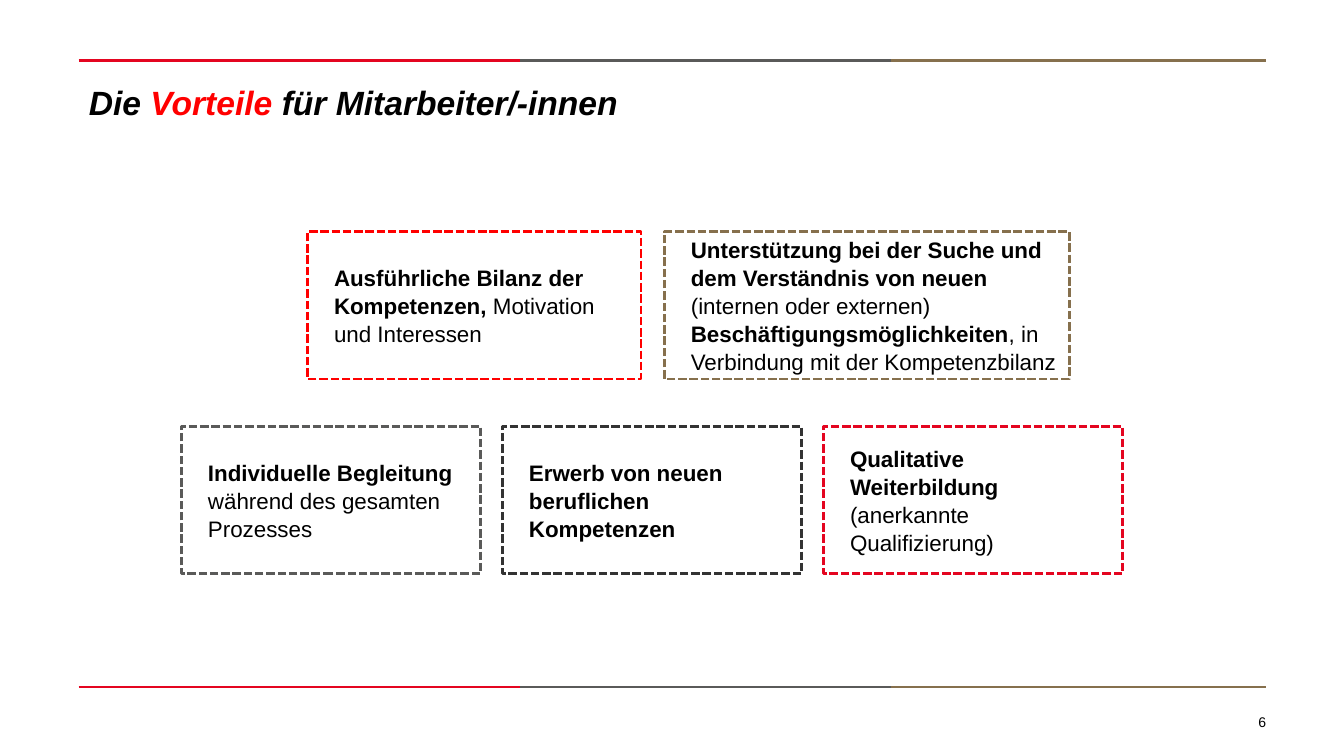
from pptx import Presentation
from pptx.dml.color import RGBColor
from pptx.enum.dml import MSO_LINE
from pptx.enum.shapes import MSO_CONNECTOR, MSO_SHAPE
from pptx.enum.text import MSO_ANCHOR, MSO_AUTO_SIZE, PP_ALIGN
from pptx.oxml.ns import qn
from pptx.util import Pt
from lxml.etree import SubElement

RED, GREY, BROWN = "E40520", "5A5A59", "86704D"
BRIGHT_RED, DARK, BLACK = "FF0000", "333333", "000000"
MARGIN_LEFT, CONTENT_WIDTH = 56.2, 848.2


def color(hex_string):
    return RGBColor.from_string(hex_string)


def add_span(para, text, size, bold=False, italic=False, ink=BLACK):
    span = para.add_run()
    span.text = text
    span.font.name = "Arial"
    span.font.size = Pt(size)
    span.font.bold = bold
    span.font.italic = italic
    span.font.color.rgb = color(ink)


deck = Presentation()
deck.slide_width, deck.slide_height = Pt(960), Pt(540)
page = deck.slides.add_slide(deck.slide_layouts[5])

# Three-coloured rules at the bottom and top
for y in (491, 43.2):
    for start, end, ink in ((56.2, 381.6, RED), (371.5, 638.6, GREY), (636.5, 904.4, BROWN)):
        rule = page.shapes.add_connector(MSO_CONNECTOR.STRAIGHT, Pt(start), Pt(y), Pt(end), Pt(y))
        rule.line.color.rgb = color(ink)
        rule.line.width = Pt(1.5)
        SubElement(rule._element.spPr, qn("a:effectLst"))

# Title
title = page.shapes.title
title.left, title.top = Pt(MARGIN_LEFT), Pt(54.7)
title.width, title.height = Pt(CONTENT_WIDTH), Pt(72)
frame = title.text_frame
frame.auto_size = MSO_AUTO_SIZE.NONE
frame.vertical_anchor = MSO_ANCHOR.TOP
para = frame.paragraphs[0]
para.alignment = PP_ALIGN.LEFT
for text, ink in (("Die", BLACK), (" Vorteile ", BRIGHT_RED), ("für Mitarbeiter/-innen", BLACK)):
    add_span(para, text, 24, bold=True, italic=True, ink=ink)

# Benefit boxes: rows of (top, left, gap, boxes), boxes of (width, outline, spans);
# a span is (text, bold), and None is a line break
BOX_HEIGHT = 105.1
rows = [
    (165.6, 219.6, 16.6, [
        (238.3, BRIGHT_RED, [("Ausführliche Bilanz der Kompetenzen, ", True), ("Motivation", False),
                             None, ("und Interessen", False)]),
        (289.4, BROWN, [("Unterstützung bei der Suche und dem Verständnis von neuen ", True),
                        ("(internen oder externen) ", False),
                        ("Beschäftigungsmöglichkeiten", True),
                        (", in Verbindung mit der Kompetenzbilanz", False)]),
    ]),
    (304.6, 129.6, 15.5, [
        (213.8, GREY, [("Individuelle Begleitung ", True), ("während des gesamten Prozesses", False)]),
        (213.8, DARK, [("Erwerb von neuen beruflichen Kompetenzen", True)]),
        (213.8, RED, [("Qualitative Weiterbildung", True), None,
                      ("(anerkannte Qualifizierung)", False)]),
    ]),
]
for top, left, gap, benefits in rows:
    for width, outline, spans in benefits:
        box = page.shapes.add_shape(MSO_SHAPE.RECTANGLE, Pt(left), Pt(top), Pt(width), Pt(BOX_HEIGHT))
        box.shadow.inherit = False
        box.fill.background()
        box.line.color.rgb = color(outline)
        box.line.width = Pt(2)
        box.line.dash_style = MSO_LINE.SQUARE_DOT
        frame = box.text_frame
        frame.word_wrap = True
        frame.vertical_anchor = MSO_ANCHOR.MIDDLE
        frame.margin_left = frame.margin_right = Pt(6.6)
        frame.margin_top = frame.margin_bottom = Pt(3)
        para = frame.paragraphs[0]
        para.alignment = PP_ALIGN.LEFT
        para.line_spacing = 1.04
        para._p.get_or_add_pPr().set("marL", str(Pt(12.4)))
        for span in spans:
            if span is None:
                para.add_line_break()
            else:
                add_span(para, span[0], 16, bold=span[1])
        left += width + gap

# Page number
number = page.shapes.add_textbox(Pt(743.8), Pt(509.8), Pt(160.6), Pt(12.2))
frame = number.text_frame
frame.word_wrap = True
frame.margin_left = frame.margin_right = frame.margin_top = frame.margin_bottom = 0
frame.paragraphs[0].alignment = PP_ALIGN.RIGHT
add_span(frame.paragraphs[0], "6", 10)

deck.save("out.pptx")
